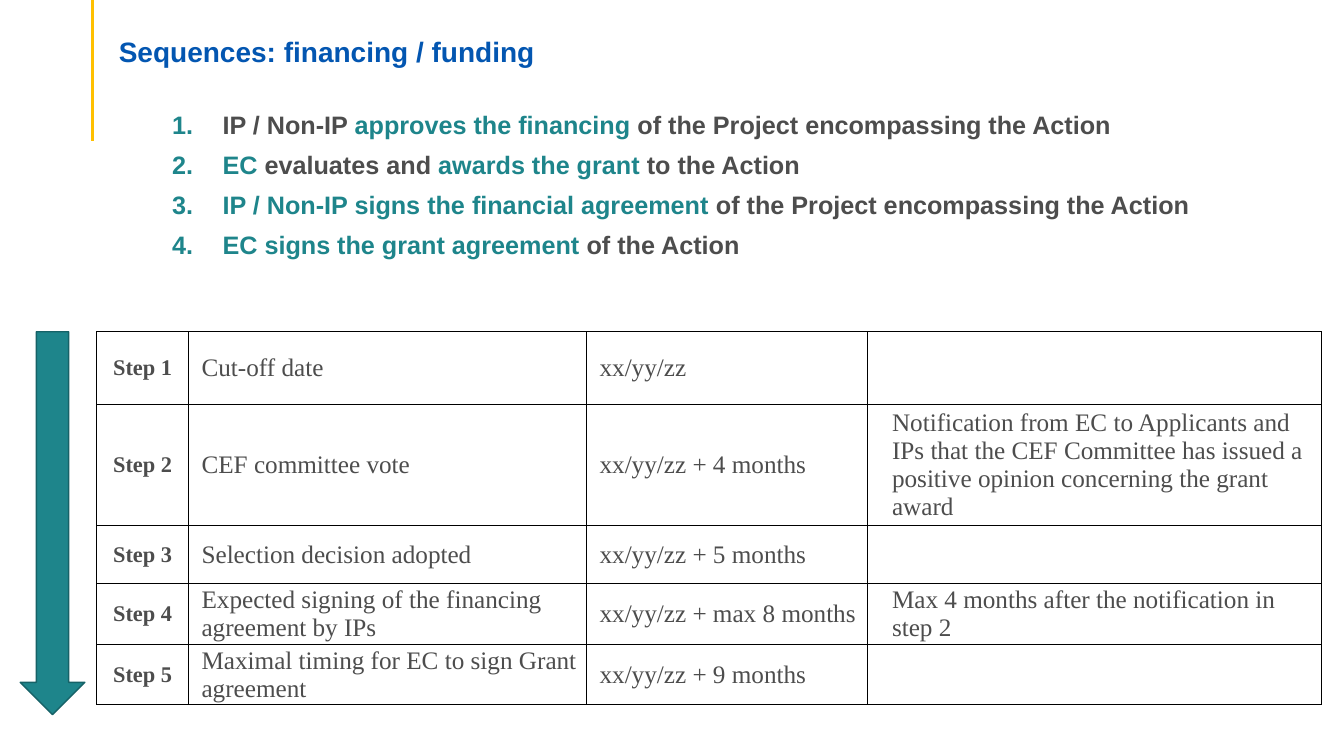
from lxml import etree
from pptx import Presentation
from pptx import util as u
from pptx.dml.color import RGBColor
from pptx.enum import shapes, text
from pptx.oxml.ns import qn

COLORS = {
    "teal": "1E858B",
    "teal_edge": "166267",
    "grey": "4D4D4D",
    "blue": "0356B1",
    "gold": "FFC000",
    "black": "000000",
    "white": "FFFFFF",
}

SEQUENCE = [
    [("IP / Non-IP ", "grey"), ("approves the financing ", "teal"),
     ("of the Project encompassing the Action", "grey")],
    [("EC ", "teal"), ("evaluates and ", "grey"),
     ("awards the grant ", "teal"), ("to the Action", "grey")],
    [("IP / Non-IP signs the financial agreement ", "teal"),
     ("of the Project encompassing the Action", "grey")],
    [("EC signs the grant agreement ", "teal"), ("of the Action", "grey")],
]

STEPS = [
    ("Cut-off date", "xx/yy/zz", ""),
    ("CEF committee vote", "xx/yy/zz + 4 months",
     "Notification from EC to Applicants and IPs that the CEF Committee "
     "has issued a positive opinion concerning the grant award"),
    ("Selection decision adopted", "xx/yy/zz + 5 months", ""),
    ("Expected signing of the financing agreement by IPs",
     "xx/yy/zz + max 8 months",
     "Max 4 months after the notification in step 2"),
    ("Maximal timing for EC to sign Grant agreement",
     "xx/yy/zz + 9 months", ""),
]
STEP_WIDTHS = [2.31, 10.03, 7.09, 11.43]
STEP_HEIGHTS = [1.83, 2.95, 1.47, 1.47, 1.47]
STEP_INDENTS = [0, 0.23, 0.23, 0.51]


def rgb(name):
    return RGBColor.from_string(COLORS[name])


def write(paragraph, words, size=18, font="Arial", color="grey", bold=False,
          align=text.PP_ALIGN.LEFT, spacing=1.0):
    paragraph.alignment = align
    paragraph.line_spacing = spacing
    run = paragraph.add_run()
    run.text = words
    run.font.size = u.Pt(size)
    run.font.name = font
    run.font.bold = bold
    run.font.color.rgb = rgb(color)


def add_color(parent, color):
    etree.SubElement(parent, qn("a:srgbClr"), val=COLORS[color])


class FundingSlide:
    def __init__(self, deck):
        self.slide = deck.slides.add_slide(deck.slide_layouts[5])
        self.shapes = self.slide.shapes

    def title(self, words, left, top, width, height):
        heading = self.shapes.title
        heading.left, heading.top = u.Cm(left), u.Cm(top)
        heading.width, heading.height = u.Cm(width), u.Cm(height)
        frame = heading.text_frame
        frame.auto_size = text.MSO_AUTO_SIZE.NONE
        frame.vertical_anchor = text.MSO_ANCHOR.MIDDLE
        frame.margin_bottom = 0
        write(frame.paragraphs[0], words, size=20, color="blue", bold=True,
              spacing=0.9)

    def rule(self, x, top, bottom, color, weight):
        accent = self.shapes.add_connector(
            shapes.MSO_CONNECTOR.STRAIGHT,
            u.Cm(x), u.Cm(top), u.Cm(x), u.Cm(bottom))
        accent.line.color.rgb = rgb(color)
        accent.line.width = u.Pt(weight)
        etree.SubElement(accent._element.spPr, qn("a:effectLst"))

    def numbered(self, items, left, top, width, height):
        frame = self.shapes.add_textbox(
            u.Cm(left), u.Cm(top), u.Cm(width), u.Cm(height)).text_frame
        frame.word_wrap = True
        for number, item in enumerate(items):
            entry = frame.add_paragraph() if number else frame.paragraphs[0]
            props = entry._p.get_or_add_pPr()
            props.set("marL", str(u.Cm(1.27)))
            props.set("indent", str(-u.Cm(1.27)))
            add_color(etree.SubElement(props, qn("a:buClr")), "teal")
            etree.SubElement(props, qn("a:buFont"), typeface="+mj-lt")
            etree.SubElement(props, qn("a:buAutoNum"), type="arabicPeriod")
            entry.space_after = u.Pt(6)
            for words, color in item:
                write(entry, words, color=color, bold=True, spacing=1.05)

    def down_arrow(self, left, top, width, height):
        arrow = self.shapes.add_shape(
            shapes.MSO_SHAPE.DOWN_ARROW,
            u.Cm(left), u.Cm(top), u.Cm(width), u.Cm(height))
        arrow.shadow.inherit = False
        arrow.fill.solid()
        arrow.fill.fore_color.rgb = rgb("teal")
        arrow.line.color.rgb = rgb("teal_edge")
        arrow.line.width = u.Pt(1)

    def cell(self, cell, words, indent, **style):
        cell.margin_left = cell.margin_right = u.Cm(0.1)
        cell.margin_top = cell.margin_bottom = 0
        cell.vertical_anchor = text.MSO_ANCHOR.MIDDLE
        props = cell._tc.get_or_add_tcPr()
        for side in ("a:lnL", "a:lnR", "a:lnT", "a:lnB"):
            border = etree.SubElement(props, qn(side), w=str(u.Pt(1)))
            add_color(etree.SubElement(border, qn("a:solidFill")), "black")
        cell.fill.solid()
        cell.fill.fore_color.rgb = rgb("white")
        if words:
            paragraph = cell.text_frame.paragraphs[0]
            paragraph._p.get_or_add_pPr().set("marL", str(u.Cm(indent)))
            write(paragraph, words, font="Times New Roman", **style)

    def timeline(self, steps, left, top):
        table = self.shapes.add_table(
            len(steps), len(STEP_WIDTHS), u.Cm(left), u.Cm(top),
            u.Cm(sum(STEP_WIDTHS)), u.Cm(sum(STEP_HEIGHTS))).table
        table.first_row = table.horz_banding = False
        for column, width in zip(table.columns, STEP_WIDTHS):
            column.width = u.Cm(width)
        for row, height in zip(table.rows, STEP_HEIGHTS):
            row.height = u.Cm(height)
        label = dict(size=16, bold=True, align=text.PP_ALIGN.CENTER)
        for r, step in enumerate(steps):
            for c, words in enumerate((f"Step {r + 1}", *step)):
                self.cell(table.cell(r, c), words, STEP_INDENTS[c],
                          **({} if c else label))


def main():
    deck = Presentation()
    deck.slide_width, deck.slide_height = u.Cm(33.87), u.Cm(19.05)
    page = FundingSlide(deck)
    page.rule(2.34, 0, 3.56, "gold", 2.25)
    page.numbered(SEQUENCE, 4.09, 2.59, 29.54, 4.85)
    page.title("Sequences: financing / funding", 2.74, 0.89, 29.21, 0.81)
    page.down_arrow(0.51, 8.36, 1.63, 9.65)
    page.timeline(STEPS, 2.44, 8.36)
    deck.save("out.pptx")


if __name__ == "__main__":
    main()
